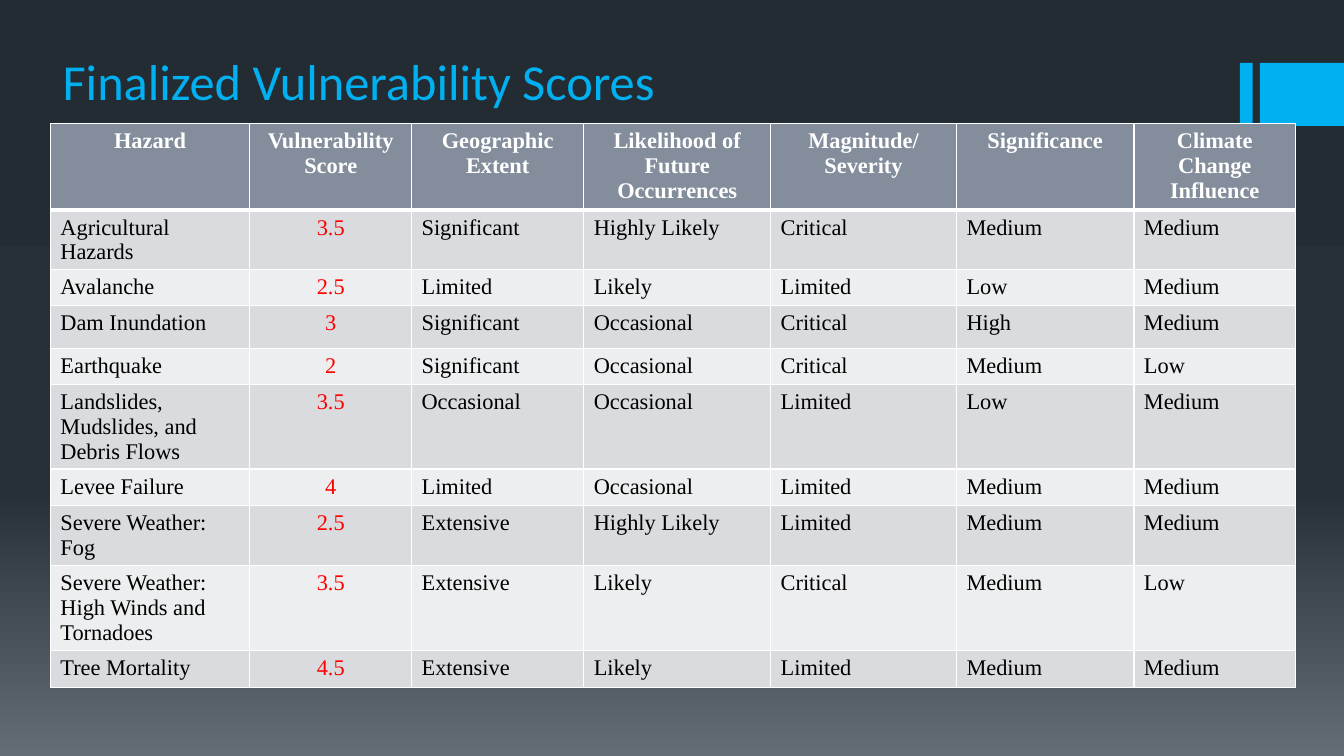
from copy import deepcopy
from dataclasses import dataclass

from lxml import etree
from pptx import Presentation
from pptx import util as u
from pptx.dml.color import RGBColor
from pptx.enum import shapes, text
from pptx.oxml import ns

EMU_PER_PX = 9525
COLORS = {
    "accent": "00B0F0",
    "header": "838D9B",
    "band_dark": "D9DBDE",
    "band_light": "EDEEEF",
    "white": "FFFFFF",
    "black": "000000",
    "score": "FF0000",
}
BACKGROUND = [(0, "242C33"), (0.65, "273037"), (1, "636D76")]

SCORE_COL = 1
COL_WIDTHS = [190, 154, 164, 178, 177, 169, 154]
ROW_HEIGHTS = [82, 57, 34, 41, 34, 80, 35, 57, 81, 35]
ROWS = [
    ("Hazard", "Vulnerability Score", "Geographic Extent", "Likelihood of Future Occurrences",
     "Magnitude/ Severity", "Significance", "Climate Change Influence"),
    ("Agricultural Hazards", "3.5", "Significant", "Highly Likely", "Critical", "Medium", "Medium"),
    ("Avalanche", "2.5", "Limited", "Likely", "Limited", "Low", "Medium"),
    ("Dam Inundation", "3", "Significant", "Occasional", "Critical", "High", "Medium"),
    ("Earthquake", "2", "Significant", "Occasional", "Critical", "Medium", "Low"),
    ("Landslides, Mudslides, and Debris Flows", "3.5", "Occasional", "Occasional", "Limited",
     "Low", "Medium"),
    ("Levee Failure", "4", "Limited", "Occasional", "Limited", "Medium", "Medium"),
    ("Severe Weather: Fog", "2.5", "Extensive", "Highly Likely", "Limited", "Medium", "Medium"),
    ("Severe Weather: High Winds and Tornadoes", "3.5", "Extensive", "Likely", "Critical",
     "Medium", "Low"),
    ("Tree Mortality", "4.5", "Extensive", "Likely", "Limited", "Medium", "Medium"),
]


@dataclass(frozen=True)
class Box:
    left: int
    top: int
    width: int
    height: int

    def emu(self) -> list[u.Emu]:
        return [px(v) for v in (self.left, self.top, self.width, self.height)]


@dataclass(frozen=True)
class CellStyle:
    fill: str
    color: str
    bold: bool
    centered: bool
    top_pt: int
    bottom_pt: int


ACCENT_BARS = [Box(1181, 60, 12, 60), Box(1200, 60, 80, 60)]
TITLE_BOX = Box(50, 42, 1024, 68)
TABLE_BOX = Box(48, 118, sum(COL_WIDTHS), sum(ROW_HEIGHTS))


def px(value: int) -> u.Emu:
    return u.Emu(value * EMU_PER_PX)


def rgb(name: str) -> RGBColor:
    return RGBColor.from_string(COLORS[name])


def paint_background(s) -> None:
    fill = s.background.fill
    fill.gradient()
    fill.gradient_angle = 270
    stops = s.element.find(".//" + ns.qn("a:gsLst"))
    stops.append(deepcopy(stops[0]))
    for stop, (position, color) in zip(fill.gradient_stops, BACKGROUND):
        stop.position = position
        stop.color.rgb = RGBColor.from_string(color)


def add_bar(s, box: Box) -> None:
    sp = s.shapes.add_shape(shapes.MSO_SHAPE.RECTANGLE, *box.emu())
    sp.shadow.inherit = False
    sp.fill.solid()
    sp.fill.fore_color.rgb = rgb("accent")
    sp.line.fill.background()


def set_title(s, wording: str) -> None:
    sp = s.shapes.title
    sp.left, sp.top, sp.width, sp.height = TITLE_BOX.emu()
    tf = sp.text_frame
    tf.text = wording
    tf.vertical_anchor = text.MSO_ANCHOR.BOTTOM
    tf.auto_size = text.MSO_AUTO_SIZE.NONE
    p = tf.paragraphs[0]
    p.alignment = text.PP_ALIGN.LEFT
    p.font.name = "Calibri"
    p.font.size = u.Pt(36)
    p.font.color.rgb = rgb("accent")


def add_border(cell, side: str, width_pt: int) -> None:
    tc_pr = cell._tc.get_or_add_tcPr()
    line = etree.SubElement(tc_pr, ns.qn(f"a:ln{side}"), w=str(u.Pt(width_pt)))
    fill = etree.SubElement(line, ns.qn("a:solidFill"))
    etree.SubElement(fill, ns.qn("a:srgbClr"), val=COLORS["white"])


def style_for(row: int, col: int) -> CellStyle:
    if row == 0:
        return CellStyle("header", "white", True, True, 1, 3)
    band = "band_dark" if row % 2 else "band_light"
    is_score = col == SCORE_COL
    return CellStyle(band, "score" if is_score else "black", False, is_score,
                     3 if row == 1 else 1, 1)


def fill_cell(cell, wording: str, style: CellStyle) -> None:
    borders = {"L": 1, "R": 1, "T": style.top_pt, "B": style.bottom_pt}
    for side, width_pt in borders.items():
        add_border(cell, side, width_pt)
    cell.fill.solid()
    cell.fill.fore_color.rgb = rgb(style.fill)
    cell.text = wording
    p = cell.text_frame.paragraphs[0]
    p.alignment = text.PP_ALIGN.CENTER if style.centered else text.PP_ALIGN.LEFT
    p.font.name = "Times New Roman"
    p.font.size = u.Pt(16)
    p.font.bold = style.bold
    p.font.color.rgb = rgb(style.color)


def add_score_table(s) -> None:
    table = s.shapes.add_table(len(ROWS), len(COL_WIDTHS), *TABLE_BOX.emu()).table
    for column, width in zip(table.columns, COL_WIDTHS):
        column.width = px(width)
    for table_row, height in zip(table.rows, ROW_HEIGHTS):
        table_row.height = px(height)
    for row, entries in enumerate(ROWS):
        for col, wording in enumerate(entries):
            fill_cell(table.cell(row, col), wording, style_for(row, col))


def main() -> None:
    prs = Presentation()
    prs.slide_width, prs.slide_height = px(1280), px(720)
    s = prs.slides.add_slide(prs.slide_layouts.get_by_name("Title Only"))
    paint_background(s)
    for bar in ACCENT_BARS:
        add_bar(s, bar)
    set_title(s, "Finalized Vulnerability Scores")
    add_score_table(s)
    prs.save("out.pptx")


if __name__ == "__main__":
    main()
